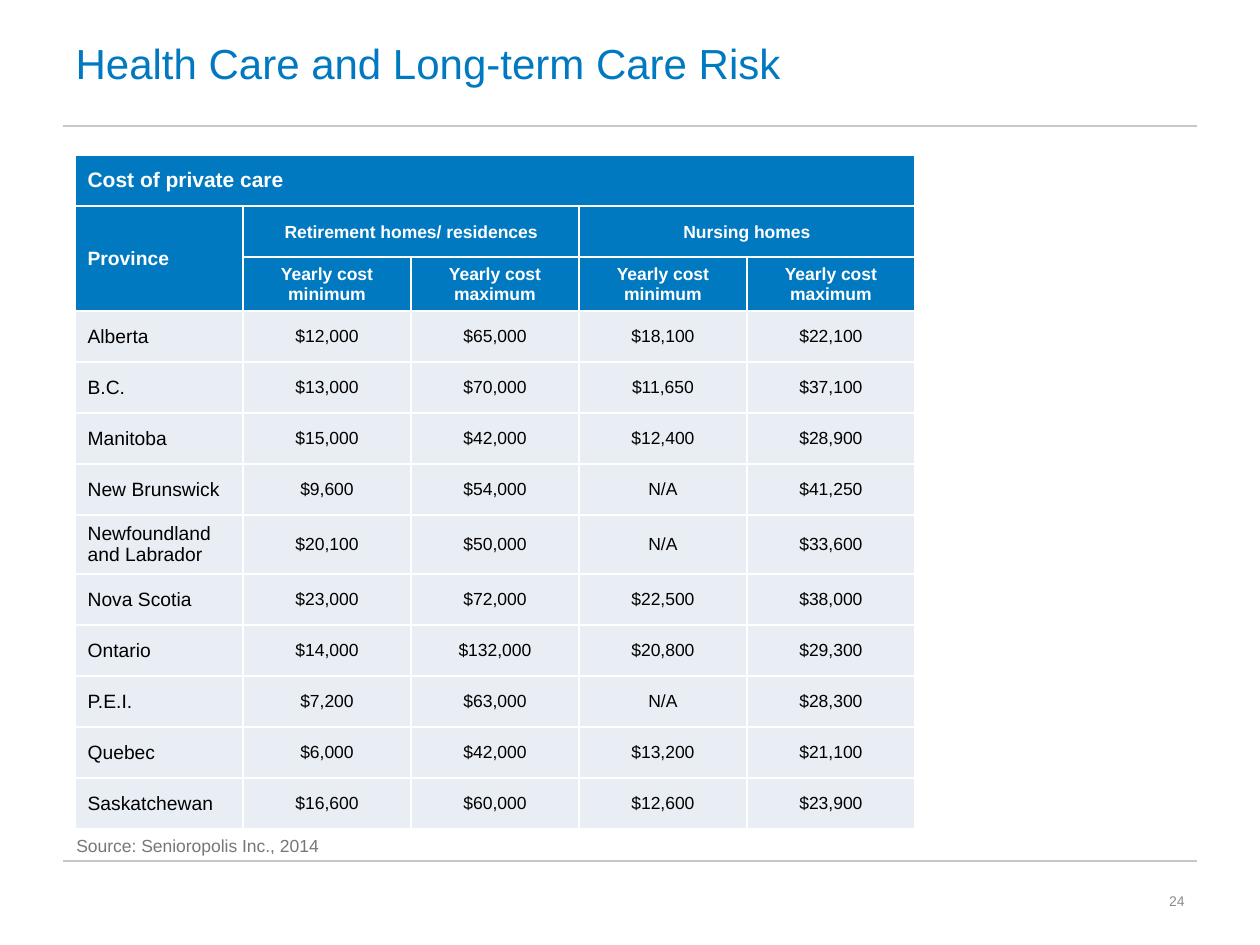
from lxml.etree import SubElement
from pptx import Presentation
from pptx.dml.color import RGBColor as RGB
from pptx.enum.shapes import MSO_CONNECTOR as CONN
from pptx.enum.text import MSO_ANCHOR as ANCHOR, PP_ALIGN as ALIGN
from pptx.oxml.ns import qn
from pptx.util import Pt

SCALE = 914400 / 126
COLORS = {
    "blue": "0079C1",
    "pale": "E9EDF4",
    "rule": "C8C8C8",
    "white": "FFFFFF",
    "black": "000000",
    "source": "777777",
    "number": "8C8C8C",
}
HEADINGS = [
    ["Cost of private care", "", "", "", ""],
    ["Province", "Retirement homes/ residences", "", "Nursing homes", ""],
    ["", *["Yearly cost\nminimum", "Yearly cost\nmaximum"] * 2],
]
COSTS = [
    ["Alberta", "$12,000", "$65,000", "$18,100", "$22,100"],
    ["B.C.", "$13,000", "$70,000", "$11,650", "$37,100"],
    ["Manitoba", "$15,000", "$42,000", "$12,400", "$28,900"],
    ["New Brunswick", "$9,600", "$54,000", "N/A", "$41,250"],
    ["Newfoundland and Labrador", "$20,100", "$50,000", "N/A", "$33,600"],
    ["Nova Scotia", "$23,000", "$72,000", "$22,500", "$38,000"],
    ["Ontario", "$14,000", "$132,000", "$20,800", "$29,300"],
    ["P.E.I.", "$7,200", "$63,000", "N/A", "$28,300"],
    ["Quebec", "$6,000", "$42,000", "$13,200", "$21,100"],
    ["Saskatchewan", "$16,600", "$60,000", "$12,600", "$23,900"],
]
MERGES = [((0, 0), (0, 4)), ((1, 0), (2, 0)), ((1, 1), (1, 2)), ((1, 3), (1, 4))]


def px(n):
    return round(n * SCALE)


def rgb(name):
    return RGB.from_string(COLORS[name])


def set_all(obj, values):
    for name, value in values.items():
        setattr(obj, name, value)


class SlideBuilder:
    font = "Arial"

    def __init__(self, prs):
        self.s = prs.slides.add_slide(prs.slide_layouts[5])

    def fill_text(self, tf, text, size, color, bold=False, align=ALIGN.LEFT):
        tf.text = text
        for p in tf.paragraphs:
            p.alignment = align
            for r in p.runs:
                set_all(r.font, {"name": self.font, "size": Pt(size), "bold": bold})
                r.font.color.rgb = rgb(color)

    def place(self, sp, box):
        set_all(sp, dict(zip(("left", "top", "width", "height"), map(px, box))))

    def title(self, text, box):
        sp = self.s.shapes.title
        self.place(sp, box)
        set_all(sp.text_frame, {"word_wrap": True, "vertical_anchor": ANCHOR.MIDDLE})
        self.fill_text(sp.text_frame, text, 24, "blue")

    def text(self, text, box, size, color, align=ALIGN.LEFT, anchor=ANCHOR.TOP):
        tf = self.s.shapes.add_textbox(*map(px, box)).text_frame
        set_all(tf, {"word_wrap": True, "vertical_anchor": anchor})
        self.fill_text(tf, text, size, color, align=align)

    def rule(self, x1, x2, y):
        line = self.s.shapes.add_connector(CONN.STRAIGHT, px(x1), px(y), px(x2), px(y))
        line.line.width = Pt(0.75)
        line.line.color.rgb = rgb("rule")
        SubElement(line._element.spPr, qn("a:effectLst"))

    def borders(self, cell):
        tc_pr = cell._tc.get_or_add_tcPr()
        for i, side in enumerate(("lnL", "lnR", "lnT", "lnB")):
            ln = tc_pr.makeelement(qn(f"a:{side}"), {"w": str(Pt(1))})
            fill = SubElement(ln, qn("a:solidFill"))
            SubElement(fill, qn("a:srgbClr"), val=COLORS["white"])
            tc_pr.insert(i, ln)

    def cell(self, cell, text, size, heading, centred):
        cell.vertical_anchor = ANCHOR.MIDDLE
        if centred:
            inset = px(1)
            set_all(cell, {"margin_left": inset, "margin_right": inset,
                           "margin_top": inset, "margin_bottom": 0})
        cell.fill.solid()
        cell.fill.fore_color.rgb = rgb("blue" if heading else "pale")
        self.borders(cell)
        self.fill_text(cell.text_frame, text, size, "white" if heading else "black",
                       heading, ALIGN.CENTER if centred else ALIGN.LEFT)

    def table(self, headings, body, merges, left, top, col_width, heights):
        rows, cols = headings + body, len(body[0])
        frame = self.s.shapes.add_table(
            len(rows), cols, px(left), px(top), px(cols * col_width), px(sum(heights)))
        table = frame.table
        set_all(table, {"first_row": False, "horz_banding": False})
        for col in table.columns:
            col.width = px(col_width)
        for i, (values, height) in enumerate(zip(rows, heights)):
            table.rows[i].height = px(height)
            for j, value in enumerate(values):
                size = 12 if i == 0 else 11 if j == 0 else 10
                self.cell(table.cell(i, j), value, size, i < len(headings), j > 0)
        for start, end in merges:
            table.cell(*start).merge(table.cell(*end))


def main():
    prs = Presentation()
    set_all(prs, {"slide_width": px(1260), "slide_height": px(945)})
    b = SlideBuilder(prs)
    for y in (861, 126):
        b.rule(63, 1197, y)
    b.title("Health Care and Long-term Care Risk", (63, 0, 1134, 126))
    b.text("24", (903, 876, 294, 50), 8, "number", ALIGN.RIGHT, ANCHOR.MIDDLE)
    heights = [51, 51, 54] + [51] * len(COSTS)
    b.table(HEADINGS, COSTS, MERGES, 75, 155, 168, heights)
    b.text("Source: Senioropolis Inc., 2014", (64, 829, 944, 34), 10, "source")
    prs.save("out.pptx")


if __name__ == "__main__":
    main()
